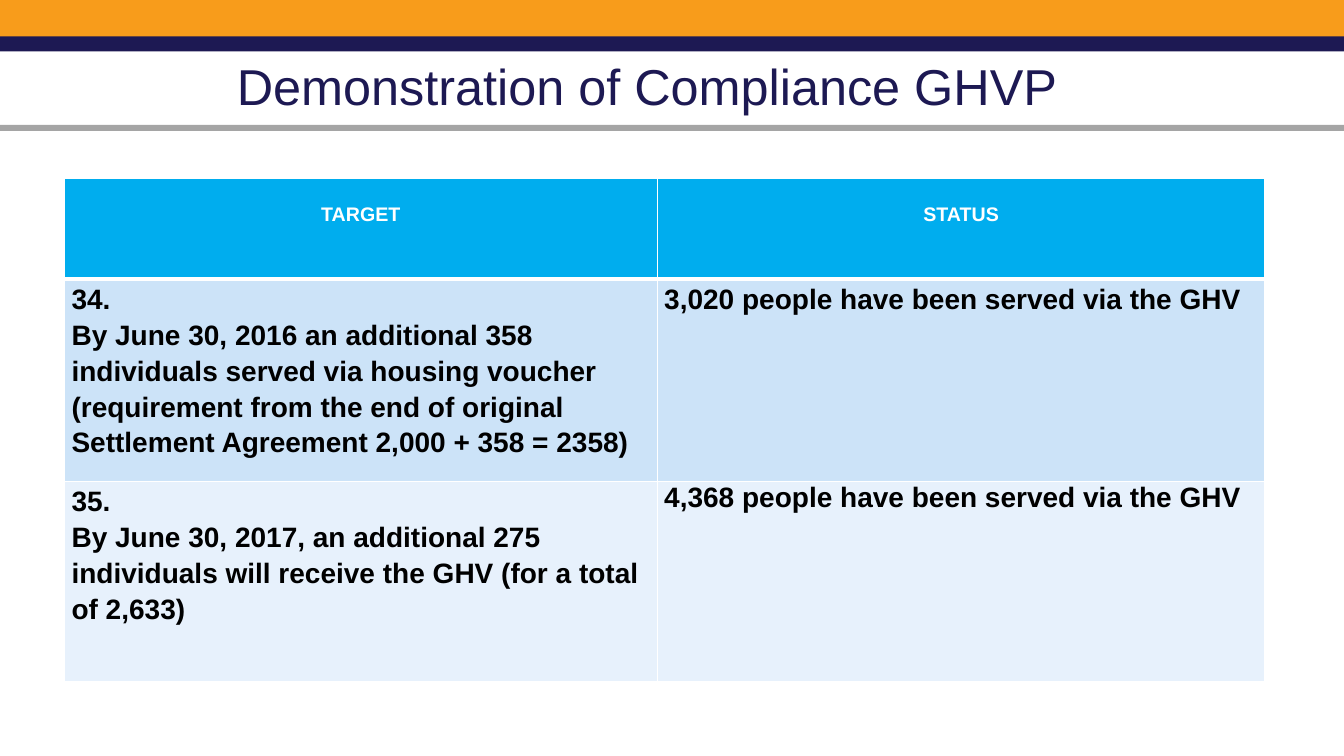
from dataclasses import dataclass

from lxml.etree import SubElement
from pptx import Presentation
from pptx.dml.color import RGBColor
from pptx.enum.shapes import MSO_SHAPE
from pptx.enum.text import MSO_ANCHOR, MSO_AUTO_SIZE, PP_ALIGN
from pptx.oxml.ns import qn
from pptx.slide import Slide
from pptx.table import _Cell as Cell
from pptx.util import Pt

WIDTH, HEIGHT = 960, 540
FONT = "Arial"
NAVY, WHITE, BLACK = "1D1953", "FFFFFF", "000000"


@dataclass
class Band:
    top: float
    height: float
    color: str


@dataclass
class TableRow:
    height: float
    fill: str
    target: str
    status: str
    status_spacing: float = 1.15
    is_header: bool = False


BANDS = [
    Band(0, 28.8, "F89C1B"),
    Band(25.92, 10.8, NAVY),
    Band(89.28, 4.32, "A5A5A5"),
]
COLUMN_WIDTHS = [423.36, 434.16]
ROWS = [
    TableRow(72, "00ADEE", "TARGET", "STATUS", is_header=True),
    TableRow(
        144.72, "CCE3F8",
        "34.\nBy June 30, 2016 an additional 358 individuals served via housing voucher "
        "(requirement from the end of original Settlement Agreement 2,000 + 358 = 2358)",
        "3,020 people have been served via the GHV",
    ),
    TableRow(
        142.56, "E7F1FC",
        "35.\nBy June 30, 2017, an additional 275 individuals will receive the GHV "
        "(for a total of 2,633)",
        "4,368 people have been served via the GHV",
        status_spacing=1.0,
    ),
]


def rgb(color: str) -> RGBColor:
    return RGBColor.from_string(color)


def draw_band(slide: Slide, band: Band) -> None:
    bar = slide.shapes.add_shape(
        MSO_SHAPE.RECTANGLE, 0, Pt(band.top), Pt(WIDTH), Pt(band.height)
    )
    bar.shadow.inherit = False
    bar.fill.solid()
    bar.fill.fore_color.rgb = rgb(band.color)
    bar.line.fill.background()


def set_title(slide: Slide, text: str) -> None:
    title = slide.shapes.title
    title.left, title.top = Pt(66.24), Pt(11.52)
    title.width, title.height = Pt(792), Pt(104.4)
    frame = title.text_frame
    frame.text = text
    frame.word_wrap = True
    frame.auto_size = MSO_AUTO_SIZE.NONE
    frame.vertical_anchor = MSO_ANCHOR.MIDDLE
    heading = frame.paragraphs[0]
    heading.alignment = PP_ALIGN.CENTER
    heading.line_spacing = 0.9
    heading.font.name = FONT
    heading.font.size = Pt(36)
    heading.font.color.rgb = rgb(NAVY)


def add_borders(cell: Cell, top: float, bottom: float) -> None:
    """Add white borders; call before filling, as the schema puts lines first."""
    properties = cell._tc.get_or_add_tcPr()
    for side, width in {"lnL": 1, "lnR": 1, "lnT": top, "lnB": bottom}.items():
        line = SubElement(properties, qn(f"a:{side}"), w=str(Pt(width)))
        fill = SubElement(line, qn("a:solidFill"))
        SubElement(fill, qn("a:srgbClr"), val=WHITE)


def fill_cell(cell: Cell, text: str, row: TableRow, spacing: float) -> None:
    cell.fill.solid()
    cell.fill.fore_color.rgb = rgb(row.fill)
    cell.margin_left = cell.margin_right = Pt(5.04)
    cell.margin_top = Pt(16 if row.is_header else 0)
    cell.margin_bottom = 0
    cell.vertical_anchor = MSO_ANCHOR.TOP
    cell.text = text
    for paragraph in cell.text_frame.paragraphs:
        paragraph.alignment = PP_ALIGN.CENTER if row.is_header else PP_ALIGN.LEFT
        paragraph.line_spacing = spacing
        paragraph.font.name = FONT
        paragraph.font.size = Pt(14 if row.is_header else 20)
        paragraph.font.bold = True
        paragraph.font.color.rgb = rgb(WHITE if row.is_header else BLACK)


def draw_compliance_table(slide: Slide) -> None:
    table = slide.shapes.add_table(
        len(ROWS), len(COLUMN_WIDTHS), Pt(46.08), Pt(127.44),
        Pt(sum(COLUMN_WIDTHS)), Pt(sum(row.height for row in ROWS)),
    ).table
    for column, width in zip(table.columns, COLUMN_WIDTHS):
        column.width = Pt(width)
    for index, row in enumerate(ROWS):
        table.rows[index].height = Pt(row.height)
        below_header = index > 0 and ROWS[index - 1].is_header
        contents = [(row.target, 1.15), (row.status, row.status_spacing)]
        for column_index, (text, spacing) in enumerate(contents):
            cell = table.cell(index, column_index)
            add_borders(cell, 3 if below_header else 1, 3 if row.is_header else 1)
            fill_cell(cell, text, row, spacing)


def main() -> None:
    presentation = Presentation()
    presentation.slide_width, presentation.slide_height = Pt(WIDTH), Pt(HEIGHT)
    title_only = presentation.slide_layouts[5]
    slide = presentation.slides.add_slide(title_only)
    for band in BANDS:
        draw_band(slide, band)
    set_title(slide, "Demonstration of Compliance GHVP")
    draw_compliance_table(slide)
    presentation.save("out.pptx")


if __name__ == "__main__":
    main()
